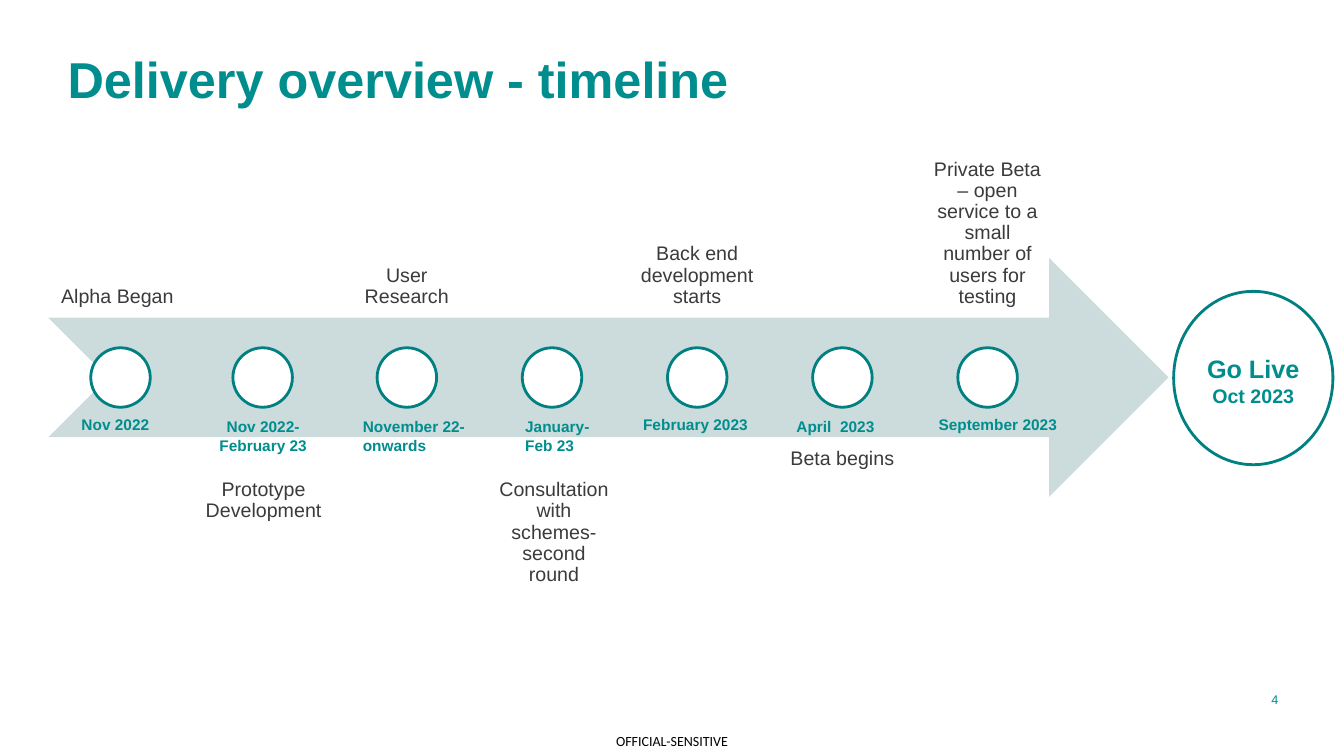
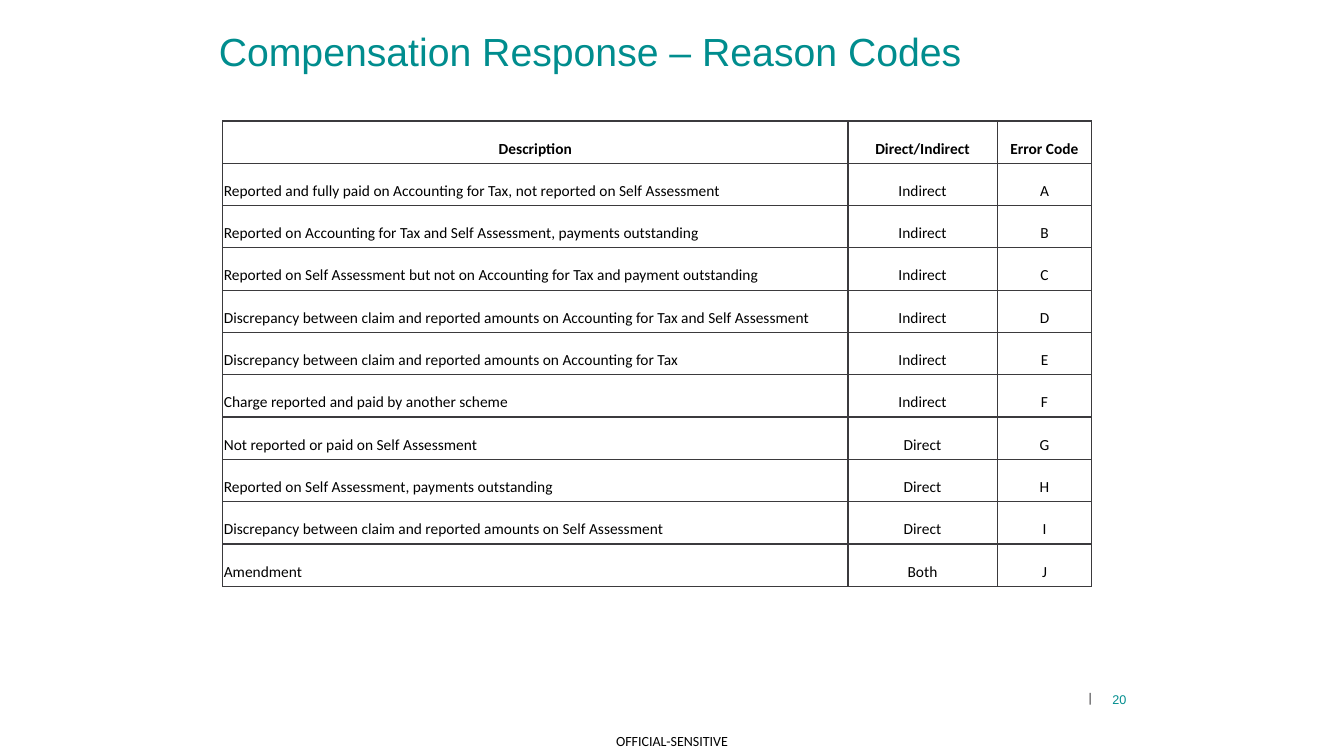
from pptx import Presentation
from pptx.dml.color import RGBColor
from pptx.enum.shapes import MSO_SHAPE
from pptx.enum.text import MSO_ANCHOR, MSO_AUTO_SIZE, PP_ALIGN
from pptx.oxml import parse_xml
from pptx.oxml.ns import nsdecls
from pptx.util import Pt

PX = 9144
TEAL = RGBColor(0x00, 0x8D, 0x8E)
RING = RGBColor(0x00, 0x80, 0x81)
PALE = RGBColor(0xCC, 0xDB, 0xDB)
INK = RGBColor(0x3B, 0x3A, 0x3D)
BLACK = RGBColor(0, 0, 0)
WHITE = RGBColor(0xFF, 0xFF, 0xFF)
LEFT, CENTER, RIGHT = PP_ALIGN.LEFT, PP_ALIGN.CENTER, PP_ALIGN.RIGHT
TOP, MIDDLE, BOTTOM = MSO_ANCHOR.TOP, MSO_ANCHOR.MIDDLE, MSO_ANCHOR.BOTTOM


def write(frame, text, size, color, align=LEFT, bold=False, font="Arial", spacing=None):
    frame.text = text
    for para in frame.paragraphs:
        para.alignment = align
        para.line_spacing = spacing
        for span in para.runs:
            span.font.name = font
            span.font.size = Pt(size)
            span.font.bold = bold
            span.font.color.rgb = color


def add_text(page, place, text, size, color, anchor=TOP, inset=0, **style):
    box = page.shapes.add_textbox(*[length * PX for length in place])
    frame = box.text_frame
    frame.word_wrap = True
    frame.vertical_anchor = anchor
    frame.margin_left = frame.margin_right = inset * PX
    frame.margin_top = frame.margin_bottom = min(inset, 11) * PX
    write(frame, text, size, color, **style)
    return box


deck = Presentation()
deck.slide_width, deck.slide_height = 1333 * PX, 750 * PX
layout = deck.slide_layouts[5]

titles = [
    ("Delivery overview - timeline", (67, 52, 1200, 91), 36, True),
    ("Compensation Response – Reason Codes", (217, 18, 900, 70), 28, False),
]
for text, place, size, bold in titles:
    title = deck.slides.add_slide(layout).shapes.title
    title.left, title.top, title.width, title.height = [length * PX for length in place]
    frame = title.text_frame
    frame.auto_size = MSO_AUTO_SIZE.NONE
    frame.vertical_anchor = TOP
    frame.margin_left = frame.margin_top = frame.margin_right = frame.margin_bottom = 0
    write(frame, text, size, TEAL, bold=bold, spacing=Pt(40))
timeline, codes = deck.slides

marking = add_text(timeline, (595, 721, 143, 29), "OFFICIAL-SENSITIVE", 10, BLACK,
                   anchor=MIDDLE, align=CENTER, font="Calibri")
marking.element.nvSpPr.cNvPr.id = 20
layout.shapes.element.append(marking.element)

for page, place, number in [(timeline, (1234, 686, 34, 15), "4"),
                            (codes, (1092, 686, 25, 15), "20")]:
    add_text(page, place, number, 9, TEAL, align=RIGHT)

arrow = timeline.shapes.add_shape(MSO_SHAPE.NOTCHED_RIGHT_ARROW,
                                  48 * PX, 256 * PX, 1111 * PX, 237 * PX)
arrow.shadow.inherit = False
arrow.fill.solid()
arrow.fill.fore_color.rgb = PALE
arrow.line.fill.background()

circles = [(left, 345, 59, 59) for left in (90, 231, 374, 518, 662, 806, 950)]
circles.append((1164, 289, 158, 172))
for place in circles:
    circle = timeline.shapes.add_shape(MSO_SHAPE.OVAL, *[length * PX for length in place])
    circle.shadow.inherit = False
    circle.fill.solid()
    circle.fill.fore_color.rgb = WHITE
    circle.line.color.rgb = RING
    circle.line.width = Pt(2)

go_live = circle.text_frame
go_live.vertical_anchor = MIDDLE
go_live.margin_top = 9 * PX
write(go_live, "Go Live\nOct 2023", 18, TEAL, align=CENTER, bold=True)
go_live.paragraphs[1].runs[0].font.size = Pt(14)

ABOVE, BELOW, LOWER = (79, BOTTOM), (434, TOP), (465, TOP)
milestones = [
    ("Alpha Began", 48, ABOVE),
    ("Prototype Development", 193, LOWER),
    ("User Research", 335, ABOVE),
    ("Consultation with schemes- second round", 481, LOWER),
    ("Back end development starts", 623, ABOVE),
    ("Beta begins", 767, BELOW),
    ("Private Beta – open service to a small number of users for testing", 911, ABOVE),
]
for text, left, (top, anchor) in milestones:
    add_text(timeline, (left, top, 137, 237), text, 14, INK,
             anchor=anchor, inset=11, align=CENTER, spacing=0.9)

dates = [
    ("Nov 2022", (71, 407, 88, 29), LEFT),
    ("Nov 2022- February 23", (185, 409, 152, 47), CENTER),
    ("November 22-onwards", (350, 409, 152, 47), LEFT),
    ("January- Feb 23", (511, 409, 108, 47), LEFT),
    ("February 2023", (628, 407, 152, 29), LEFT),
    ("April  2023", (780, 409, 152, 29), LEFT),
    ("September 2023", (921, 407, 152, 29), LEFT),
]
for text, place, align in dates:
    box = add_text(timeline, place, text, 11, TEAL, inset=10, align=align, bold=True)
    box.text_frame.margin_top = box.text_frame.margin_bottom = 5 * PX

add_text(codes, (347, 681, 736, 22), "|", 9, INK, anchor=MIDDLE, align=RIGHT)

rows = [
    ("Description", "Direct/Indirect", "Error Code"),
    ("Reported and fully paid on Accounting for Tax, not reported on Self Assessment", "Indirect", "A"),
    ("Reported on Accounting for Tax and Self Assessment, payments outstanding", "Indirect", "B"),
    ("Reported on Self Assessment but not on Accounting for Tax and payment outstanding", "Indirect", "C"),
    ("Discrepancy between claim and reported amounts on Accounting for Tax and Self Assessment", "Indirect", "D"),
    ("Discrepancy between claim and reported amounts on Accounting for Tax", "Indirect", "E"),
    ("Charge reported and paid by another scheme", "Indirect", "F"),
    ("Not reported or paid on Self Assessment", "Direct", "G"),
    ("Reported on Self Assessment, payments outstanding", "Direct", "H"),
    ("Discrepancy between claim and reported amounts on Self Assessment", "Direct", "I"),
    ("Amendment", "Both", "J"),
]
table = codes.shapes.add_table(len(rows), 3, 221 * PX, 120 * PX,
                               862 * PX, len(rows) * 42 * PX).table
table.first_row = table.horz_banding = False
for column, width in zip(table.columns, (620, 148, 94)):
    column.width = width * PX
for row_number, row in enumerate(rows):
    for column_number, text in enumerate(row):
        cell = table.cell(row_number, column_number)
        header = row_number == 0
        align = CENTER if header or column_number else LEFT
        write(cell.text_frame, text, 11, BLACK, align=align, bold=header, font="Calibri")
        cell.vertical_anchor = BOTTOM
        cell.margin_left = cell.margin_top = cell.margin_right = PX
        cell.margin_bottom = 5 * PX
        properties = cell._tc.get_or_add_tcPr()
        for side in ("lnL", "lnR", "lnT", "lnB"):
            properties.append(parse_xml(
                f'<a:{side} {nsdecls("a")} w="{Pt(1)}"><a:solidFill>'
                f'<a:srgbClr val="{INK}"/></a:solidFill></a:{side}>'))
        cell.fill.background()

deck.save("out.pptx")
